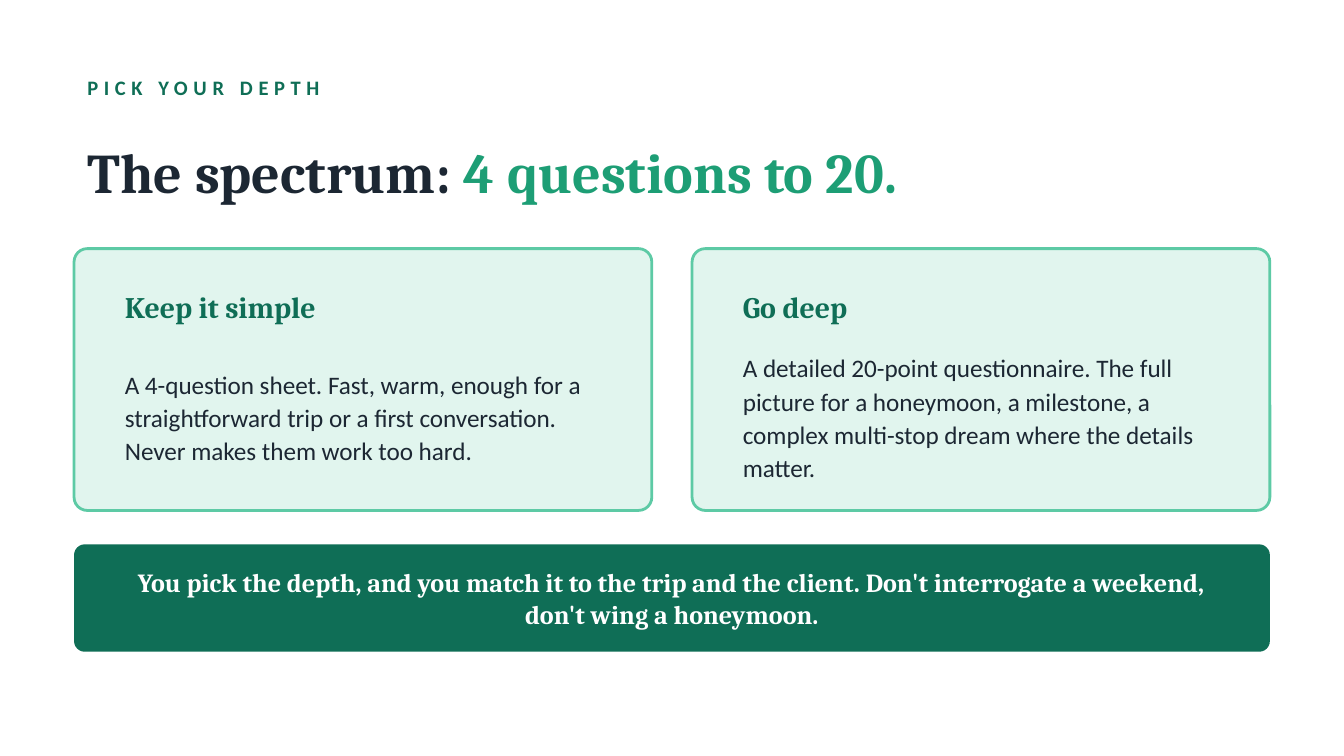
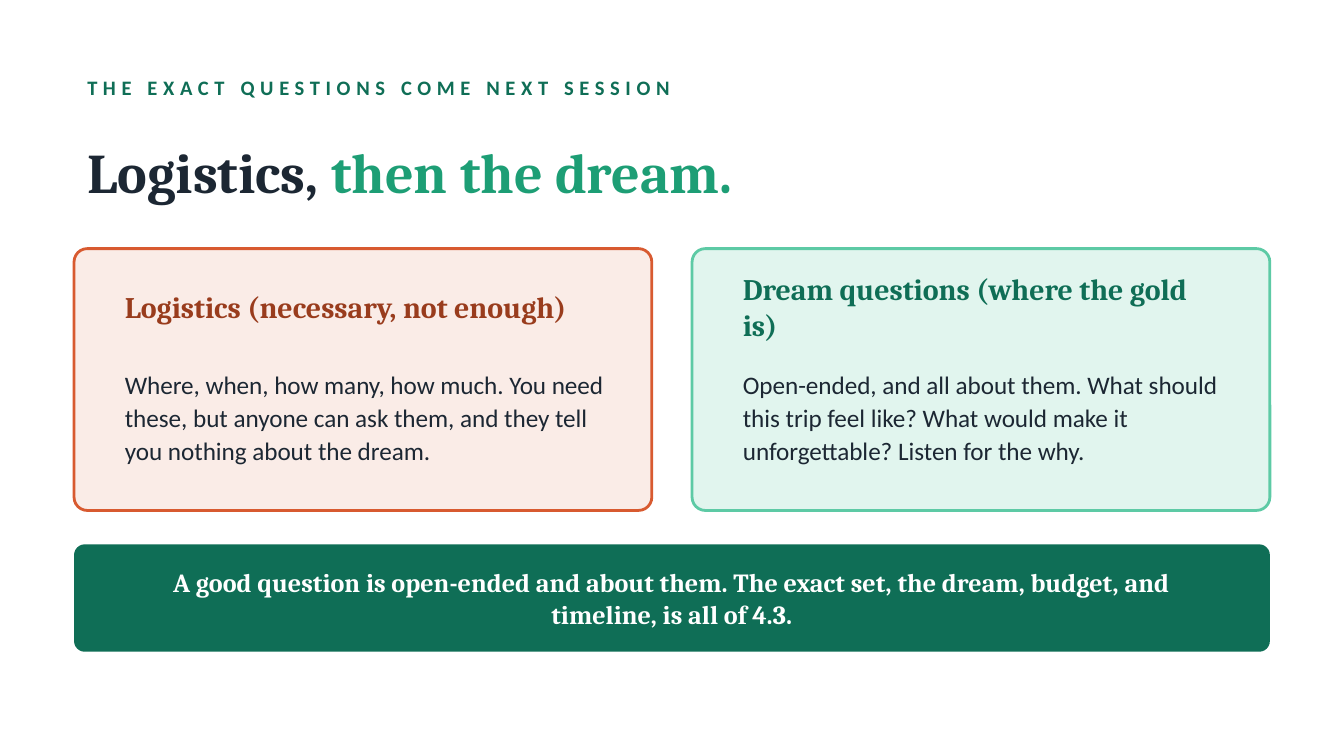
from collections import namedtuple

from pptx import Presentation
from pptx import util as u
from pptx.dml.color import RGBColor
from pptx.enum import shapes, text

WHITE = RGBColor(0xFF, 0xFF, 0xFF)
INK = RGBColor(0x1C, 0x27, 0x33)
DEEP_GREEN = RGBColor(0x0F, 0x6E, 0x56)
BRIGHT_GREEN = RGBColor(0x1D, 0x9E, 0x75)
SOFT_GREEN = RGBColor(0x5D, 0xCA, 0xA5)
PALE_GREEN = RGBColor(0xE1, 0xF5, 0xEE)
RUST = RGBColor(0x99, 0x3C, 0x1D)
ORANGE = RGBColor(0xD8, 0x5A, 0x30)
PALE_ORANGE = RGBColor(0xFA, 0xEC, 0xE7)

SERIF, SANS = "Cambria", "Calibri"

Box = namedtuple("Box", "left top width height")
Palette = namedtuple("Palette", "fill line heading")
Card = namedtuple("Card", "heading body palette")

GREEN_CARD = Palette(PALE_GREEN, SOFT_GREEN, DEEP_GREEN)
ORANGE_CARD = Palette(PALE_ORANGE, ORANGE, RUST)

MARGIN = u.Cm(1.4)
CONTENT_WIDTH = u.Cm(22.6)
CARD_GAP = u.Cm(0.76)
KICKER_BOX = Box(MARGIN, u.Cm(1.27), CONTENT_WIDTH, u.Cm(0.76))
TITLE_BOX = Box(MARGIN, u.Cm(2.16), CONTENT_WIDTH, u.Cm(2.16))
CARDS_BOX = Box(MARGIN, u.Cm(4.7), CONTENT_WIDTH, u.Cm(4.95))
BAND_BOX = Box(MARGIN, u.Cm(10.29), CONTENT_WIDTH, u.Cm(2.03))


def add_run(paragraph, words, font_name, size, color, bold=True):
    """Append one formatted run to a paragraph."""
    run = paragraph.add_run()
    run.text = words
    run.font.name = font_name
    run.font.size = u.Pt(size)
    run.font.bold = bold
    run.font.color.rgb = color
    return run


def prepare_frame(shape, alignment=text.PP_ALIGN.LEFT):
    """Wrap and centre the text vertically, and return the first paragraph."""
    frame = shape.text_frame
    frame.word_wrap = True
    frame.auto_size = text.MSO_AUTO_SIZE.NONE
    frame.vertical_anchor = text.MSO_ANCHOR.MIDDLE
    paragraph = frame.paragraphs[0]
    paragraph.alignment = alignment
    return paragraph


def add_label(slide, box, alignment=text.PP_ALIGN.LEFT):
    """Add a text box and return its paragraph."""
    return prepare_frame(slide.shapes.add_textbox(*box), alignment)


def add_panel(slide, box, corner, fill, line=None):
    """Add a rounded rectangle with an optional outline."""
    panel = slide.shapes.add_shape(shapes.MSO_SHAPE.ROUNDED_RECTANGLE, *box)
    panel.shadow.inherit = False
    panel.adjustments[0] = corner
    panel.fill.solid()
    panel.fill.fore_color.rgb = fill
    if line is None:
        panel.line.fill.background()
    else:
        panel.line.color.rgb = line
        panel.line.width = u.Pt(1.5)


def add_kicker(slide, box, words):
    """Add the letter-spaced line above the title."""
    run = add_run(add_label(slide, box), words, SANS, 11, DEEP_GREEN)
    run.font._element.set("spc", "300")


def fill_title(slide, box, lead, accent):
    """Place the title and write it in two colours."""
    title = slide.shapes.title
    title.left, title.top, title.width, title.height = box
    paragraph = prepare_frame(title)
    add_run(paragraph, lead, SERIF, 30, INK)
    add_run(paragraph, accent, SERIF, 30, BRIGHT_GREEN)


def add_card(slide, box, card):
    """Add a panel holding a heading and a short text."""
    add_panel(slide, box, 0.051, card.palette.fill, card.palette.line)
    left, width = box.left + u.Cm(0.71), u.Cm(9.65)
    heading = add_label(slide, Box(left, box.top + u.Cm(0.46), width, u.Cm(1.27)))
    add_run(heading, card.heading, SERIF, 16, card.palette.heading)
    body = add_label(slide, Box(left, box.top + u.Cm(1.83), width, u.Cm(2.67)))
    body.line_spacing = 1.1
    add_run(body, card.body, SANS, 13.5, INK, bold=False)


def add_card_row(slide, box, cards):
    """Share the width of the box equally between the cards."""
    width = (box.width - CARD_GAP * (len(cards) - 1)) // len(cards)
    for index, card in enumerate(cards):
        left = box.left + index * (width + CARD_GAP)
        add_card(slide, Box(left, box.top, width, box.height), card)


def add_takeaway_band(slide, box, words):
    """Add the dark band with its centred takeaway."""
    add_panel(slide, box, 0.1, DEEP_GREEN)
    inset = u.Cm(0.64)
    inner = Box(box.left + inset, box.top, box.width - 2 * inset, box.height)
    paragraph = add_label(slide, inner, text.PP_ALIGN.CENTER)
    add_run(paragraph, words, SERIF, 14, WHITE)


def add_comparison_slide(presentation, kicker, lead, accent, cards, takeaway):
    """Add a slide that sets cards side by side above a takeaway."""
    slide = presentation.slides.add_slide(presentation.slide_layouts[5])
    slide.background.fill.solid()
    slide.background.fill.fore_color.rgb = WHITE
    add_kicker(slide, KICKER_BOX, kicker)
    fill_title(slide, TITLE_BOX, lead, accent)
    add_card_row(slide, CARDS_BOX, cards)
    add_takeaway_band(slide, BAND_BOX, takeaway)


def main():
    """Build and save the presentation."""
    presentation = Presentation()
    presentation.slide_width = u.Cm(25.4)
    presentation.slide_height = u.Cm(14.29)
    add_comparison_slide(
        presentation,
        "PICK YOUR DEPTH",
        "The spectrum: ",
        "4 questions to 20.",
        [
            Card(
                "Keep it simple",
                "A 4-question sheet. Fast, warm, enough for a straightforward trip "
                "or a first conversation. Never makes them work too hard.",
                GREEN_CARD,
            ),
            Card(
                "Go deep",
                "A detailed 20-point questionnaire. The full picture for a honeymoon, "
                "a milestone, a complex multi-stop dream where the details matter.",
                GREEN_CARD,
            ),
        ],
        "You pick the depth, and you match it to the trip and the client. "
        "Don't interrogate a weekend, don't wing a honeymoon.",
    )
    add_comparison_slide(
        presentation,
        "THE EXACT QUESTIONS COME NEXT SESSION",
        "Logistics, ",
        "then the dream.",
        [
            Card(
                "Logistics (necessary, not enough)",
                "Where, when, how many, how much. You need these, but anyone can ask "
                "them, and they tell you nothing about the dream.",
                ORANGE_CARD,
            ),
            Card(
                "Dream questions (where the gold is)",
                "Open-ended, and all about them. What should this trip feel like? "
                "What would make it unforgettable? Listen for the why.",
                GREEN_CARD,
            ),
        ],
        "A good question is open-ended and about them. "
        "The exact set, the dream, budget, and timeline, is all of 4.3.",
    )
    presentation.save("out.pptx")


if __name__ == "__main__":
    main()
